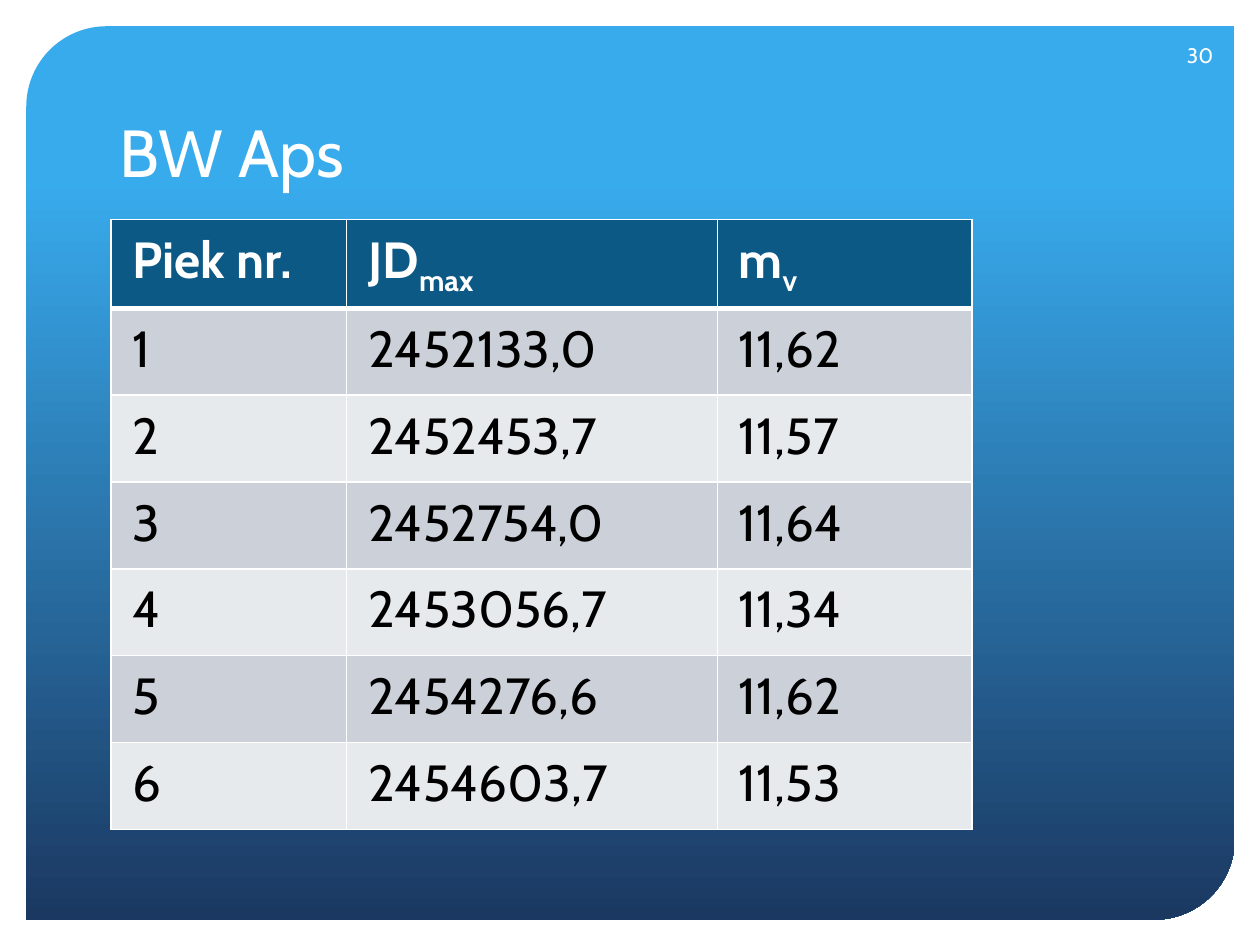
from typing import NamedTuple

from lxml import etree
from pptx import Presentation
from pptx.dml.color import RGBColor
from pptx.enum import shapes, text
from pptx.oxml import ns
from pptx.util import Cm, Pt

WHITE = RGBColor(0xFF, 0xFF, 0xFF)
BLACK = RGBColor(0, 0, 0)
SKY = RGBColor(0x38, 0xAB, 0xED)
NAVY = RGBColor(0x1B, 0x38, 0x61)
HEADER_BLUE = RGBColor(0x0C, 0x59, 0x86)
BANDS = (RGBColor(0xE7, 0xEA, 0xED), RGBColor(0xCC, 0xD1, 0xD9))
FONT = "Cabin"


class Label(NamedTuple):
    words: str
    left: float
    top: float
    width: float
    height: float
    size: int
    anchor: text.MSO_ANCHOR
    align: text.PP_ALIGN


class Entry(NamedTuple):
    words: str
    subscript: str = ""


LABELS = (
    Label("BW Aps", 2.16, 1.07, 21.06, 2.9, 38,
          text.MSO_ANCHOR.BOTTOM, text.PP_ALIGN.LEFT),
    Label("30", 23.34, 0.61, 1.37, 1.02, 12,
          text.MSO_ANCHOR.MIDDLE, text.PP_ALIGN.RIGHT),
)
HEADER = (Entry("Piek nr."), Entry("JD", "max"), Entry("m", "v"))
PEAKS = (
    ("2452133,0", "11,62"),
    ("2452453,7", "11,57"),
    ("2452754,0", "11,64"),
    ("2453056,7", "11,34"),
    ("2454276,6", "11,62"),
    ("2454603,7", "11,53"),
)
COLUMN_WIDTHS = (4.75, 7.47, 5.13)
ROW_HEIGHT = 1.75


def style(para, size: int, color: RGBColor, bold: bool = False) -> None:
    font = para.font
    font.name, font.size, font.bold = FONT, Pt(size), bold
    font.color.rgb = color


def draw_panel(page) -> None:
    panel = page.shapes.add_shape(
        shapes.MSO_SHAPE.ROUND_2_DIAG_RECTANGLE,
        Cm(0.53), Cm(0.53), Cm(24.36), Cm(18.01))
    panel.adjustments[0] = 0.09
    panel.shadow.inherit = False
    panel.line.fill.background()
    panel.fill.gradient()
    panel.fill.gradient_angle = 270
    for stop, color, position in zip(
            panel.fill.gradient_stops, (SKY, NAVY), (0.17, 1)):
        stop.color.rgb = color
        stop.position = position


def draw_label(page, label: Label) -> None:
    box = page.shapes.add_textbox(
        Cm(label.left), Cm(label.top), Cm(label.width), Cm(label.height))
    frame = box.text_frame
    frame.word_wrap = True
    frame.vertical_anchor = label.anchor
    para = frame.paragraphs[0]
    para.text = label.words
    para.alignment = label.align
    style(para, label.size, WHITE)


def add_border(cell, side: str, points: int) -> None:
    line = etree.SubElement(
        cell._tc.get_or_add_tcPr(), ns.qn(f"a:ln{side}"), w=str(Pt(points)))
    fill = etree.SubElement(line, ns.qn("a:solidFill"))
    etree.SubElement(fill, ns.qn("a:srgbClr"), val=str(WHITE))


def fill_cell(cell, entry: Entry, row: int) -> None:
    is_header = row == 0
    cell.margin_left = cell.margin_right = Cm(0.43)
    cell.margin_top = cell.margin_bottom = Cm(0.2)
    add_border(cell, "L", 1)
    add_border(cell, "R", 1)
    add_border(cell, "T", 3 if row == 1 else 1)
    add_border(cell, "B", 3 if is_header else 1)
    cell.fill.solid()
    cell.fill.fore_color.rgb = HEADER_BLUE if is_header else BANDS[row % 2]
    para = cell.text_frame.paragraphs[0]
    para.add_run().text = entry.words
    if entry.subscript:
        span = para.add_run()
        span.text = entry.subscript
        span._r.get_or_add_rPr().set("baseline", "-25000")
    style(para, 29, WHITE if is_header else BLACK, is_header)


def draw_table(page) -> None:
    rows = [HEADER] + [
        (Entry(str(number)), Entry(date), Entry(magnitude))
        for number, (date, magnitude) in enumerate(PEAKS, 1)]
    table = page.shapes.add_table(
        len(rows), len(HEADER), Cm(2.24), Cm(4.42),
        Cm(sum(COLUMN_WIDTHS)), Cm(ROW_HEIGHT * len(rows))).table
    for column, width in zip(table.columns, COLUMN_WIDTHS):
        column.width = Cm(width)
    for row, entries in enumerate(rows):
        table.rows[row].height = Cm(ROW_HEIGHT)
        for column, entry in enumerate(entries):
            fill_cell(table.cell(row, column), entry, row)


def main() -> None:
    deck = Presentation()
    deck.slide_width, deck.slide_height = Cm(25.4), Cm(19.05)
    page = deck.slides.add_slide(deck.slide_layouts[6])
    draw_panel(page)
    for label in LABELS:
        draw_label(page, label)
    draw_table(page)
    deck.save("out.pptx")


if __name__ == "__main__":
    main()
